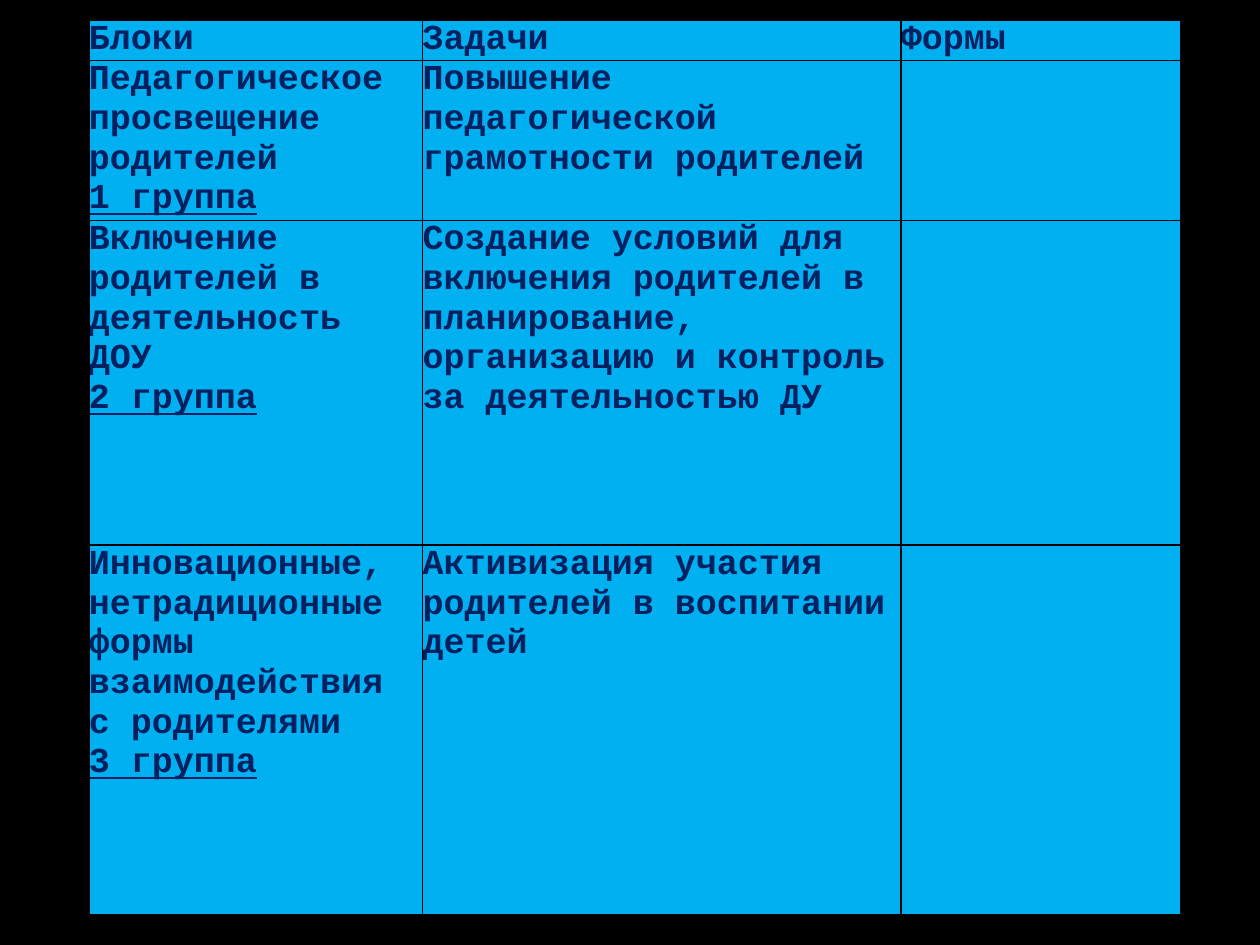
from lxml import etree
from pptx import Presentation
from pptx.dml.color import RGBColor
from pptx.enum.text import MSO_ANCHOR
from pptx.oxml.ns import qn
from pptx.util import Cm, Pt

COLORS = {"background": "000000", "cell": "00B0F0", "text": "002060", "border": "000000"}
COLUMN_WIDTHS = [6.73, 9.64, 5.65]
ROW_HEIGHTS = [0.82, 3.23, 6.54, 7.46]
# Each cell holds a list of paragraphs.
ROWS = [
    [["Блоки"], ["Задачи"], ["Формы"]],
    [["Педагогическое просвещение родителей", "1 группа"],
     ["Повышение педагогической грамотности родителей"], []],
    [["Включение родителей в деятельность ДОУ", "2 группа"],
     ["Создание условий для включения родителей в планирование, "
      "организацию и контроль за деятельностью ДУ"], []],
    [["Инновационные, нетрадиционные формы взаимодействия с родителями", "3 группа"],
     ["Активизация участия родителей в воспитании детей"], []],
]


def add_borders(cell):
    properties = cell._tc.get_or_add_tcPr()
    for index, side in enumerate(("lnL", "lnR", "lnT", "lnB")):
        line = etree.Element(qn(f"a:{side}"), w=str(Pt(1)))
        fill = etree.SubElement(line, qn("a:solidFill"))
        etree.SubElement(fill, qn("a:srgbClr"), val=COLORS["border"])
        properties.insert(index, line)


presentation = Presentation()
presentation.slide_width = Cm(25.4)
presentation.slide_height = Cm(19.05)
slide = presentation.slides.add_slide(presentation.slide_layouts[6])
slide.background.fill.solid()
slide.background.fill.fore_color.rgb = RGBColor.from_string(COLORS["background"])

table = slide.shapes.add_table(
    len(ROWS), len(COLUMN_WIDTHS), Cm(1.79), Cm(0.4),
    Cm(sum(COLUMN_WIDTHS)), Cm(sum(ROW_HEIGHTS))).table
for column, width in zip(table.columns, COLUMN_WIDTHS):
    column.width = Cm(width)
for row, height in zip(table.rows, ROW_HEIGHTS):
    row.height = Cm(height)

for row_index, row_texts in enumerate(ROWS):
    for column_index, texts in enumerate(row_texts):
        cell = table.cell(row_index, column_index)
        cell.fill.solid()
        cell.fill.fore_color.rgb = RGBColor.from_string(COLORS["cell"])
        cell.margin_left = cell.margin_right = cell.margin_top = cell.margin_bottom = 0
        cell.vertical_anchor = MSO_ANCHOR.MIDDLE if row_index == 0 else MSO_ANCHOR.TOP
        add_borders(cell)
        if not texts:
            continue
        cell.text = "\n".join(texts)
        for paragraph_index, paragraph in enumerate(cell.text_frame.paragraphs):
            font = paragraph.font
            font.name = "Courier New"
            font.size = Pt(20)
            font.bold = True
            font.underline = paragraph_index > 0
            font.color.rgb = RGBColor.from_string(COLORS["text"])

presentation.save("out.pptx")
